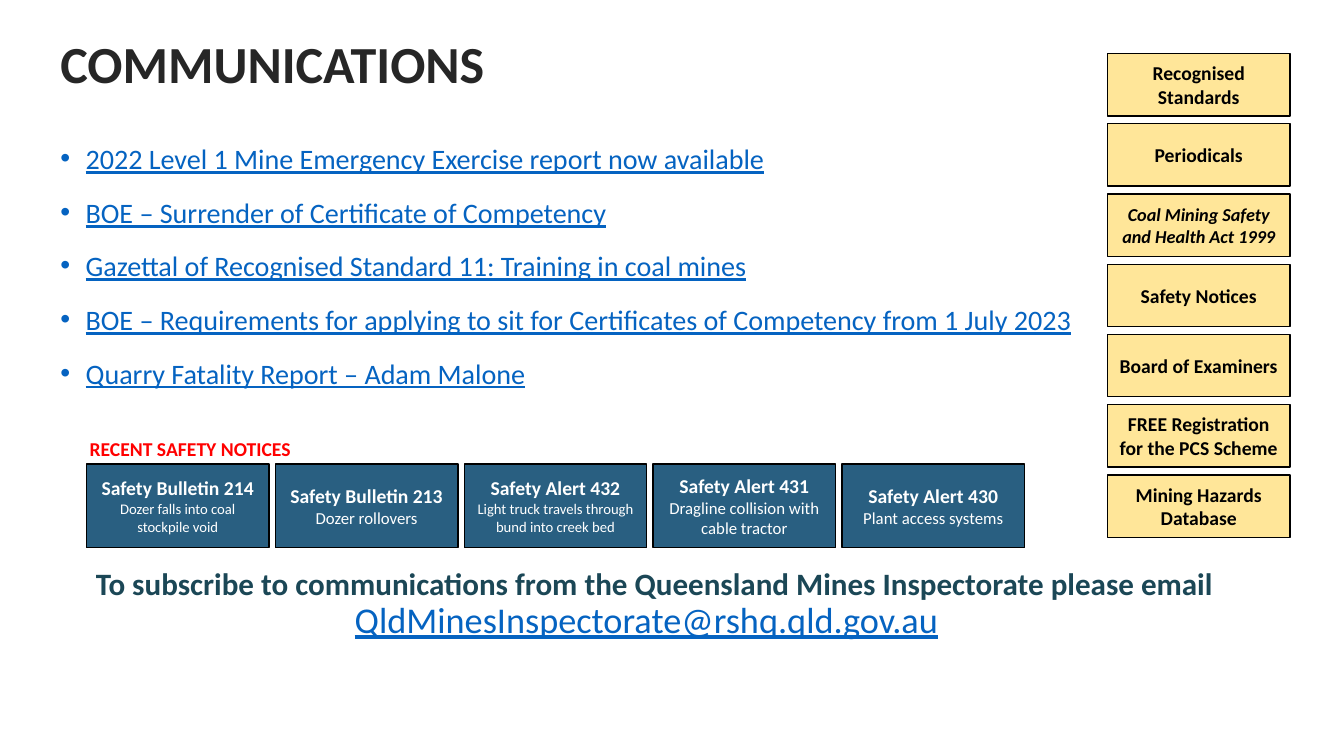
from dataclasses import dataclass
from typing import Optional

from lxml import etree
from pptx import Presentation
from pptx.dml.color import RGBColor
from pptx.enum.shapes import MSO_SHAPE as Preset
from pptx.enum.text import MSO_ANCHOR as Anchor, PP_ALIGN as Align
from pptx.oxml.ns import qn
from pptx.util import Cm, Pt

INK = RGBColor(0x26, 0x26, 0x26)
LINK_BLUE = RGBColor(0x05, 0x63, 0xC1)
TEAL = RGBColor(0x1B, 0x47, 0x56)
RED = RGBColor(0xFF, 0x00, 0x00)
NAVY = RGBColor(0x29, 0x5F, 0x81)
CREAM = RGBColor(0xFF, 0xE6, 0x99)
BLACK = RGBColor(0x00, 0x00, 0x00)
WHITE = RGBColor(0xFF, 0xFF, 0xFF)

BUTTON_WIDTH = 4.6
NOTICE_LEFT, NOTICE_TOP, NOTICE_STEP, NOTICE_HEIGHT = 2.18, 11.69, 4.76, 2.11
TOPIC_LEFT, TOPIC_TOP, TOPIC_STEP, TOPIC_HEIGHT = 27.91, 1.35, 1.77, 1.57


@dataclass
class Line:
    """One paragraph: its text, font values and paragraph values."""
    text: str
    font: dict
    layout: dict


@dataclass
class Notice:
    heading: str
    summary: str
    summary_size: float = 12


@dataclass
class Topic:
    label: str
    preset: Preset = Preset.ACTION_BUTTON_CUSTOM
    size: float = 14
    italic: Optional[bool] = None


NEWS = [
    "2022 Level 1 Mine Emergency Exercise report now available",
    "BOE – Surrender of Certificate of Competency",
    "Gazettal of Recognised Standard 11: Training in coal mines",
    "BOE – Requirements for applying to sit for Certificates of Competency from 1 July 2023",
    "Quarry Fatality Report – Adam Malone",
]
NOTICES = [
    Notice("Safety Bulletin 214", "Dozer falls into coal stockpile void", 10.5),
    Notice("Safety Bulletin 213", "Dozer rollovers"),
    Notice("Safety Alert 432", "Light truck travels through bund into creek bed", 10.5),
    Notice("Safety Alert 431", "Dragline collision with cable tractor"),
    Notice("Safety Alert 430", "Plant access systems"),
]
TOPICS = [
    Topic("Recognised Standards"),
    Topic("Periodicals"),
    Topic("Coal Mining Safety and Health Act 1999", size=13, italic=True),
    Topic("Safety Notices"),
    Topic("Board of Examiners", Preset.RECTANGLE),
    Topic("FREE Registration for the PCS Scheme", Preset.RECTANGLE),
    Topic("Mining Hazards Database", Preset.RECTANGLE),
]


def font_values(size: float, colour: RGBColor, **extra) -> dict:
    return {"name": "Calibri", "size": Pt(size), "color": colour, **extra}


def write_lines(frame, lines: list[Line]) -> list:
    """Fill the frame with the lines and return their paragraphs."""
    frame.word_wrap = True
    paras = []
    for index, line in enumerate(lines):
        para = frame.add_paragraph() if index else frame.paragraphs[0]
        span = para.add_run()
        span.text = line.text
        for name, value in line.layout.items():
            setattr(para, name, value)
        for name, value in line.font.items():
            if name == "color":
                span.font.color.rgb = value
            else:
                setattr(span.font, name, value)
        paras.append(para)
    return paras


def add_text(page, left: float, top: float, width: float, height: float,
             lines: list[Line]) -> list:
    box = page.shapes.add_textbox(Cm(left), Cm(top), Cm(width), Cm(height))
    return write_lines(box.text_frame, lines)


def add_bullet(para) -> None:
    """Give the paragraph a blue dot and a hanging indent."""
    props = para._p.get_or_add_pPr()
    props.set("marL", str(Cm(0.64)))
    props.set("indent", str(Cm(-0.64)))
    colour = etree.SubElement(props, qn("a:buClr"))
    etree.SubElement(colour, qn("a:srgbClr"), val=str(LINK_BLUE))
    etree.SubElement(props, qn("a:buFont"), typeface="Arial")
    etree.SubElement(props, qn("a:buChar"), char="•")


def add_button(page, preset: Preset, left: float, top: float, height: float,
               fill: RGBColor, lines: list[Line]) -> None:
    button = page.shapes.add_shape(preset, Cm(left), Cm(top), Cm(BUTTON_WIDTH), Cm(height))
    button.shadow.inherit = False
    button.fill.solid()
    button.fill.fore_color.rgb = fill
    button.line.color.rgb = BLACK
    button.line.width = Pt(1)
    button.text_frame.vertical_anchor = Anchor.MIDDLE
    write_lines(button.text_frame, lines)


def add_news(page) -> None:
    title = Line("COMMUNICATIONS", font_values(37.2, INK, bold=True), {"line_spacing": 0.8})
    items = [
        Line(text, font_values(20.1, LINK_BLUE, underline=True),
             {"line_spacing": 0.8, "space_before": Pt(19 if index else 39)})
        for index, text in enumerate(NEWS)
    ]
    for para in add_text(page, 1.27, 0.97, 26.11, 9.6, [title, *items])[1:]:
        add_bullet(para)


def add_subscription(page) -> None:
    centred = {"alignment": Align.CENTER, "line_spacing": 0.9}
    paras = add_text(page, 1.07, 14.2, 30.86, 2.11, [
        Line("To subscribe to communications from the Queensland Mines Inspectorate please email",
             font_values(22.2, TEAL, bold=True), centred),
        Line("QldMinesInspectorate@rshq.qld.gov.au",
             font_values(25.9, LINK_BLUE, underline=True), centred),
    ])
    paras[1]._p.get_or_add_pPr().set("marR", str(Cm(0.41)))


def add_notices(page) -> None:
    add_text(page, 2.01, 10.95, 5.87, 0.84, [
        Line("RECENT SAFETY NOTICES", font_values(14, RED, bold=True), {"line_spacing": 0.9})])
    centred = {"alignment": Align.CENTER}
    for index, notice in enumerate(NOTICES):
        add_button(page, Preset.ACTION_BUTTON_CUSTOM, NOTICE_LEFT + index * NOTICE_STEP,
                   NOTICE_TOP, NOTICE_HEIGHT, NAVY, [
                       Line(notice.heading, font_values(14, WHITE, bold=True), centred),
                       Line(notice.summary, font_values(notice.summary_size, WHITE), centred),
                   ])


def add_topics(page) -> None:
    for index, topic in enumerate(TOPICS):
        font = font_values(topic.size, BLACK, bold=True, italic=topic.italic)
        add_button(page, topic.preset, TOPIC_LEFT, TOPIC_TOP + index * TOPIC_STEP,
                   TOPIC_HEIGHT, CREAM, [Line(topic.label, font, {"alignment": Align.CENTER})])


def main() -> None:
    deck = Presentation()
    deck.slide_width, deck.slide_height = Cm(33.87), Cm(19.05)
    page = deck.slides.add_slide(deck.slide_layouts[6])
    add_news(page)
    add_subscription(page)
    add_notices(page)
    add_topics(page)
    deck.save("out.pptx")


if __name__ == "__main__":
    main()
